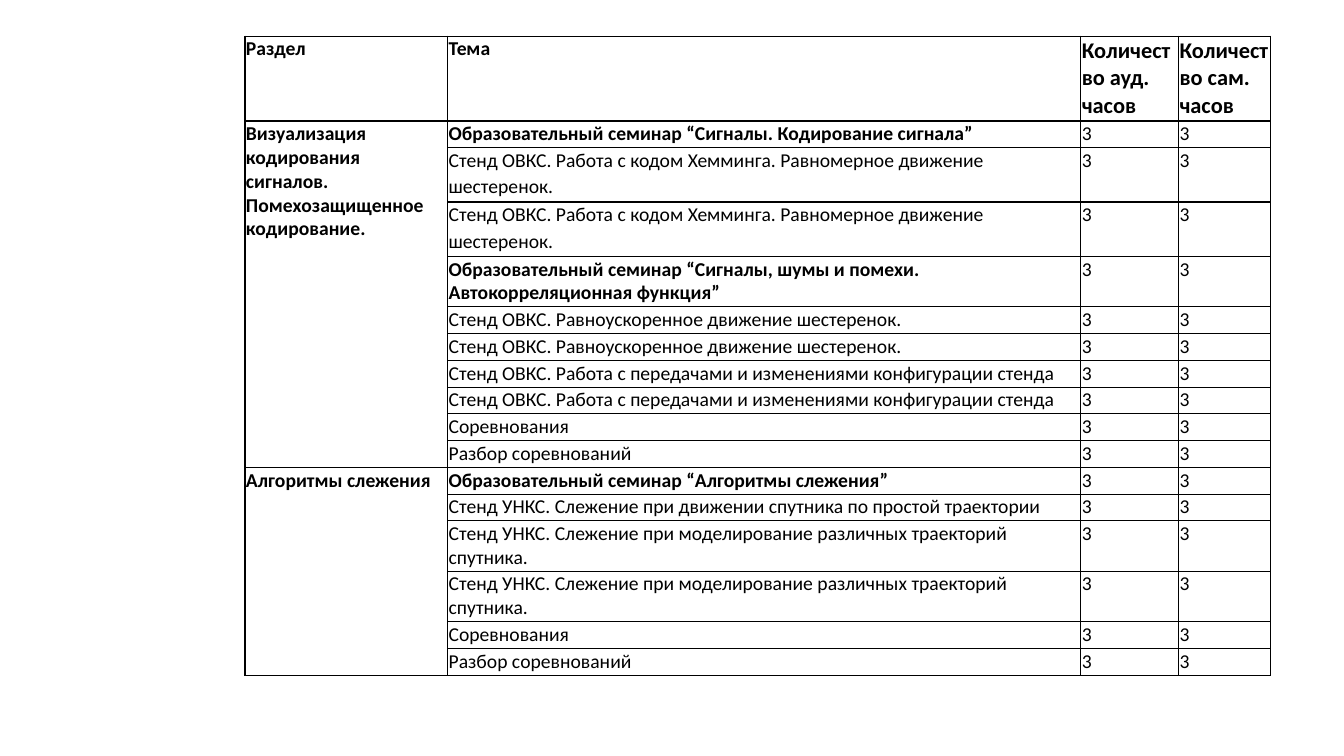
from lxml.etree import SubElement
from pptx import Presentation
from pptx.dml.color import RGBColor
from pptx.oxml.ns import qn
from pptx.util import Inches, Pt

COLORS = {"text": "000000", "border": "000000"}
HEADERS = [("Раздел", 14), ("Тема", 14),
           ("Количество ауд. часов", 16), ("Количество сам. часов", 16)]
COLUMN_WIDTHS = [2.01, 6.28, 0.97, 0.91]
TABLE_TOP, TABLE_HEIGHT, HEADER_HEIGHT = 0.36, 6.34, 0.84
HOURS = "3"

HAMMING = "Стенд ОВКС. Работа с кодом Хемминга. Равномерное движение шестеренок."
ACCELERATION = "Стенд ОВКС. Равноускоренное движение шестеренок. "
GEARS = "Стенд ОВКС. Работа с передачами и изменениями конфигурации стенда"
TRAJECTORIES = "Стенд УНКС. Слежение при моделирование различных траекторий спутника."
CONTEST = ["Соревнования", "Разбор соревнований"]
SECTIONS = [
    ("Визуализация кодирования сигналов. Помехозащищенное кодирование.",
     ["Образовательный семинар “Сигналы. Кодирование сигнала”",
      HAMMING, HAMMING,
      "Образовательный семинар “Сигналы, шумы и помехи. Автокорреляционная функция”",
      ACCELERATION, ACCELERATION, GEARS, GEARS, *CONTEST]),
    ("Алгоритмы слежения ",
     ["Образовательный семинар “Алгоритмы слежения”",
      "Стенд УНКС. Слежение при движении спутника по простой траектории",
      TRAJECTORIES, TRAJECTORIES, *CONTEST]),
]
# Topics that wrap onto a second line
TALL_ROWS = {HAMMING: 0.54, TRAJECTORIES: 0.5, SECTIONS[0][1][3]: 0.5}


def add_text(p, text, size=14, bold=False, font="Calibri", color="text"):
    r = p.add_run()
    r.text = text
    r.font.name = font
    r.font.size = Pt(size)
    r.font.bold = bold
    r.font.color.rgb = RGBColor.from_string(COLORS[color])


class SlideBuilder:
    def __init__(self, slide, margin=0.01, border_width=1):
        self.slide = slide
        self.margin = Inches(margin)
        self.border_width = Pt(border_width)

    def add_table(self, left, top, widths, heights):
        frame = self.slide.shapes.add_table(
            len(heights), len(widths), Inches(left), Inches(top),
            Inches(sum(widths)), Inches(sum(heights)))
        table = frame.table
        table.first_row = table.horz_banding = False
        for column, width in zip(table.columns, widths):
            column.width = Inches(width)
        for row, height in zip(table.rows, heights):
            row.height = Inches(height)
        for cell in table.iter_cells():
            self.format_cell(cell)
        return table

    def format_cell(self, cell):
        cell.margin_left = cell.margin_right = self.margin
        cell.margin_top = cell.margin_bottom = self.margin
        props = cell._tc.get_or_add_tcPr()
        for side in ("a:lnL", "a:lnR", "a:lnT", "a:lnB"):
            line = SubElement(props, qn(side), w=str(self.border_width))
            fill = SubElement(line, qn("a:solidFill"))
            SubElement(fill, qn("a:srgbClr"), val=COLORS["border"])
        cell.fill.background()

    def write_cell(self, cell, text, **style):
        p = cell.text_frame.paragraphs[0]
        add_text(p, text, **style)
        return p


def row_heights():
    """Share the height left by the header and tall rows among the others."""
    topics = [topic for _, group in SECTIONS for topic in group]
    tall = [TALL_ROWS[topic] for topic in topics if topic in TALL_ROWS]
    single = (TABLE_HEIGHT - HEADER_HEIGHT - sum(tall)) / (len(topics) - len(tall))
    return [HEADER_HEIGHT] + [TALL_ROWS.get(topic, single) for topic in topics]


def main():
    prs = Presentation()
    prs.slide_width, prs.slide_height = Inches(13.33), Inches(7.5)
    builder = SlideBuilder(prs.slides.add_slide(prs.slide_layouts[6]))
    table = builder.add_table(2.43, TABLE_TOP, COLUMN_WIDTHS, row_heights())

    for col, (header, size) in enumerate(HEADERS):
        builder.write_cell(table.cell(0, col), header, size=size, bold=True)

    row = 1
    for section, topics in SECTIONS:
        section_cell = table.cell(row, 0)
        section_cell.merge(table.cell(row + len(topics) - 1, 0))
        builder.write_cell(section_cell, section, bold=True)
        for row, topic in enumerate(topics, row):
            p = builder.write_cell(table.cell(row, 1), topic,
                                   bold=topic.startswith("Образовательный"))
            if topic == HAMMING:
                add_text(p, " ", size=16)
            for col in (2, 3):
                builder.write_cell(table.cell(row, col), HOURS)
        row += 1

    prs.save("out.pptx")


if __name__ == "__main__":
    main()
